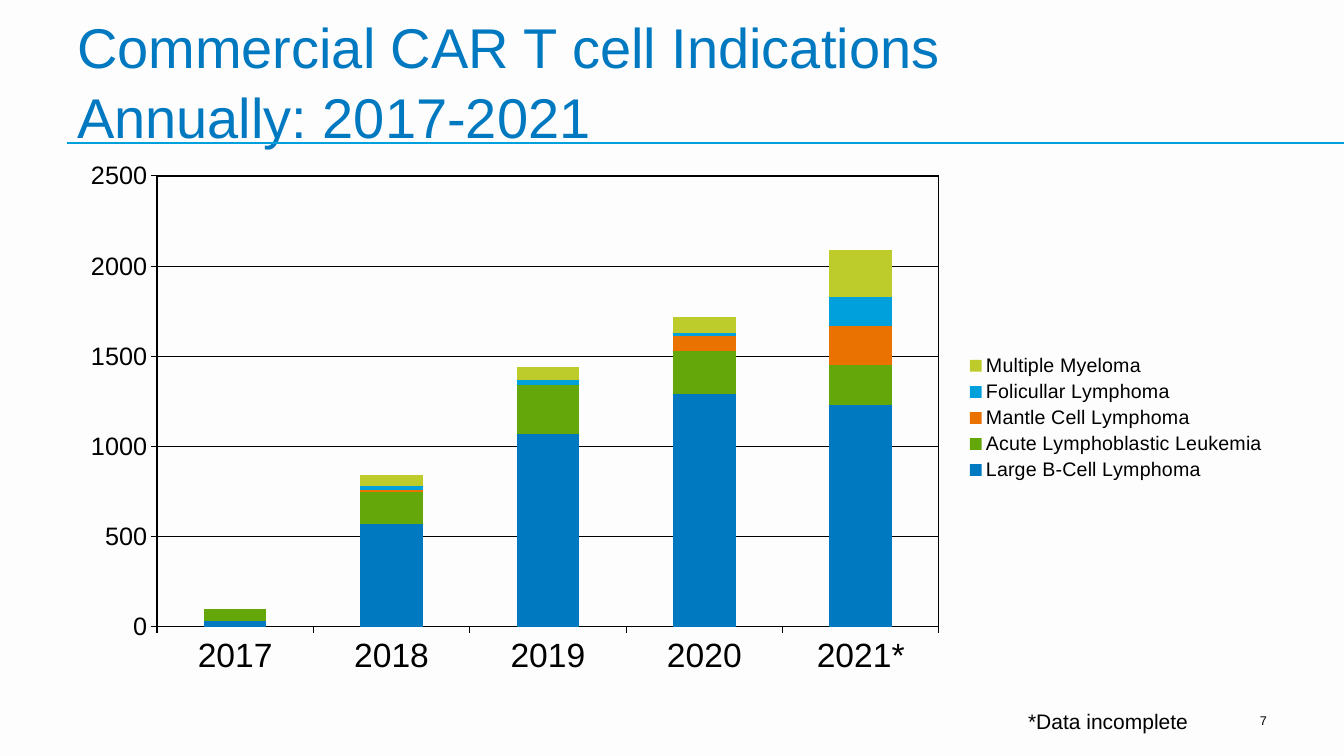
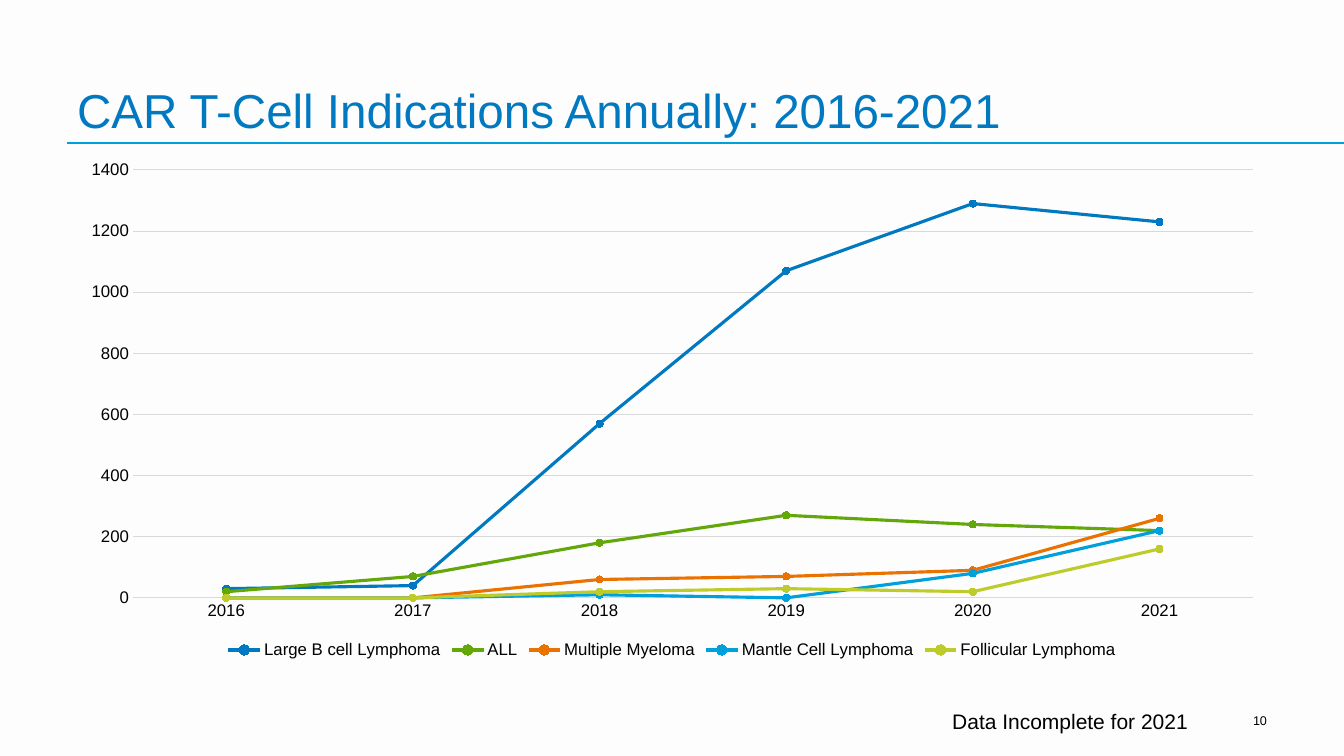
from pptx import Presentation
from pptx.chart.data import CategoryChartData
from pptx.dml.color import RGBColor
from pptx.enum.chart import XL_CHART_TYPE, XL_LEGEND_POSITION, XL_MARKER_STYLE, XL_TICK_MARK
from pptx.enum.text import MSO_ANCHOR, MSO_AUTO_SIZE, PP_ALIGN
from pptx.oxml import parse_xml
from pptx.oxml.ns import nsdecls, qn
from pptx.util import Emu, Pt

FONT = "Arial"
PAPER = RGBColor(0xFD, 0xFD, 0xFD)
BLACK = RGBColor(0, 0, 0)
GRID = RGBColor(0xD9, 0xD9, 0xD9)
BLUE = RGBColor(0x00, 0x79, 0xC1)
GREEN = RGBColor(0x63, 0xA7, 0x0A)
ORANGE = RGBColor(0xEA, 0x72, 0x00)
SKY = RGBColor(0x00, 0xA0, 0xDD)
LIME = RGBColor(0xBD, 0xCC, 0x2A)
SERIES_COLORS = [BLUE, GREEN, ORANGE, SKY, LIME]

SLIDE_W, SLIDE_H = 1344, 756
LEFT = 67
RULE_Y = 143

# Boxes are (left, top, width, height) in px
STACKED = {
    "title": "Commercial CAR T cell Indications Annually: 2017-2021",
    "title_box": (LEFT, 29, 972, 126), "title_size": 40,
    "note": "*Data incomplete", "number": "7",
    "type": XL_CHART_TYPE.COLUMN_STACKED,
    "box": (LEFT, 151, 1210, 534), "plot": (157, 176, 782, 451),
    "cats": ["2017", "2018", "2019", "2020", "2021*"],
    "series": [
        ("Large B-Cell Lymphoma", [30, 570, 1070, 1290, 1230]),
        ("Acute Lymphoblastic Leukemia", [70, 180, 270, 240, 220]),
        ("Mantle Cell Lymphoma", [0, 10, 0, 80, 220]),
        ("Folicullar Lymphoma", [0, 20, 30, 20, 160]),
        ("Multiple Myeloma", [0, 60, 70, 90, 260]),
    ],
    "scale": (2500, 500), "tick": XL_TICK_MARK.OUTSIDE, "line": BLACK,
    "cat_size": 24, "val_size": 18,
    "legend": XL_LEGEND_POSITION.RIGHT, "legend_size": 14,
}
LINES = {
    "title": "CAR T-Cell Indications Annually: 2016-2021",
    "title_box": (LEFT, 17, 1019, 126), "title_size": 34,
    "note": "Data Incomplete for 2021", "number": "10",
    "type": XL_CHART_TYPE.LINE_MARKERS,
    "box": (LEFT, 151, 1210, 512), "plot": (133, 170, 1120, 428),
    "cats": ["2016", "2017", "2018", "2019", "2020", "2021"],
    "series": [
        ("Large B cell Lymphoma", [30, 40, 570, 1070, 1290, 1230]),
        ("ALL", [20, 70, 180, 270, 240, 220]),
        ("Multiple Myeloma", [0, 0, 60, 70, 90, 260]),
        ("Mantle Cell Lymphoma", [0, 0, 10, 0, 80, 220]),
        ("Follicular Lymphoma", [0, 0, 20, 30, 20, 160]),
    ],
    "scale": (1400, 200), "tick": XL_TICK_MARK.NONE, "line": GRID,
    "cat_size": 12, "val_size": 12,
    "legend": XL_LEGEND_POSITION.BOTTOM, "legend_size": 12,
}


def px(n):
    return Emu(round(n * 914400 / 100.8))


def set_font(font, size, color=BLACK):
    font.name = FONT
    font.size = Pt(size)
    font.color.rgb = color


def set_line(line, color, width=0.75):
    line.color.rgb = color
    line.width = Pt(width)


def write(sp, text, size, color, align, anchor):
    tf = sp.text_frame
    tf.word_wrap = True
    tf.auto_size = MSO_AUTO_SIZE.NONE
    tf.vertical_anchor = anchor
    p = tf.paragraphs[0]
    p.alignment = align
    r = p.add_run()
    r.text = text
    set_font(r.font, size, color)
    return p


def add_frame(s, content):
    """Title, rule, note and slide number."""
    title = s.shapes.title
    title.left, title.top, title.width, title.height = map(px, content["title_box"])
    p = write(title, content["title"], content["title_size"], BLUE,
              PP_ALIGN.LEFT, MSO_ANCHOR.BOTTOM)
    p.line_spacing = 1.05

    rule = s.shapes.add_connector(1, px(LEFT), px(RULE_Y), px(SLIDE_W), px(RULE_Y))
    set_line(rule.line, SKY)
    rule._element.spPr.append(parse_xml(f"<a:effectLst {nsdecls('a')}/>"))

    for key, left, width, size in (("note", 460, 738, 15), ("number", 1210, 67, 9)):
        sp = s.shapes.add_textbox(px(left), px(701), px(width), px(40))
        write(sp, content[key], size, BLACK, PP_ALIGN.RIGHT, MSO_ANCHOR.MIDDLE)


def place_plot(chart, box, plot):
    """Fix the inner plot area, as fractions of the chart box."""
    x, y, w, h = box
    left, top, width, height = plot
    parts = {"x": (left - x) / w, "y": (top - y) / h, "w": width / w, "h": height / h}
    values = "".join(f'<c:{k} val="{v:.4f}"/>' for k, v in parts.items())
    area = chart.element.xpath(".//c:plotArea")[0]
    for old in area.findall(qn("c:layout")):
        area.remove(old)
    area.insert(0, parse_xml(
        f'<c:layout {nsdecls("c")}><c:manualLayout><c:layoutTarget val="inner"/>'
        f'<c:xMode val="edge"/><c:yMode val="edge"/>{values}</c:manualLayout></c:layout>'))
    return area


def add_indications_chart(s, content):
    data = CategoryChartData()
    data.categories = content["cats"]
    for name, values in content["series"]:
        data.add_series(name, values)
    chart = s.shapes.add_chart(content["type"], *map(px, content["box"]), data).chart
    chart.has_title = False
    set_font(chart.font, 10)

    chart.has_legend = True
    chart.legend.position = content["legend"]
    chart.legend.include_in_layout = False
    set_font(chart.legend.font, content["legend_size"])

    cat, val = chart.category_axis, chart.value_axis
    for axis, size in ((cat, content["cat_size"]), (val, content["val_size"])):
        axis.major_tick_mark = content["tick"]
        axis.minor_tick_mark = XL_TICK_MARK.NONE
        set_font(axis.tick_labels.font, size)
        set_line(axis.format.line, content["line"])
    val.minimum_scale = 0
    val.maximum_scale, val.major_unit = content["scale"]
    val.has_major_gridlines = True
    set_line(val.major_gridlines.format.line, content["line"])

    area = place_plot(chart, content["box"], content["plot"])
    plot = chart.plots[0]
    plot.vary_by_categories = False
    if content["type"] == XL_CHART_TYPE.COLUMN_STACKED:
        plot.gap_width, plot.overlap = 150, 100
        area.append(parse_xml(
            f'<c:spPr {nsdecls("c", "a")}><a:noFill/><a:ln w="9525"><a:solidFill>'
            f'<a:srgbClr val="{BLACK}"/></a:solidFill></a:ln></c:spPr>'))
    else:
        val.format.line.fill.background()

    for series, color in zip(plot.series, SERIES_COLORS):
        if content["type"] == XL_CHART_TYPE.COLUMN_STACKED:
            series.format.fill.solid()
            series.format.fill.fore_color.rgb = color
        else:
            series.smooth = False
            set_line(series.format.line, color, 2.25)
            marker = series.marker
            marker.style, marker.size = XL_MARKER_STYLE.CIRCLE, 5
            marker.format.fill.solid()
            marker.format.fill.fore_color.rgb = color
            set_line(marker.format.line, color)


def main():
    prs = Presentation()
    prs.slide_width, prs.slide_height = px(SLIDE_W), px(SLIDE_H)
    background = prs.slide_master.background.fill
    background.solid()
    background.fore_color.rgb = PAPER
    for content in (STACKED, LINES):
        s = prs.slides.add_slide(prs.slide_layouts[5])
        add_frame(s, content)
        add_indications_chart(s, content)
    prs.save("out.pptx")


if __name__ == "__main__":
    main()
